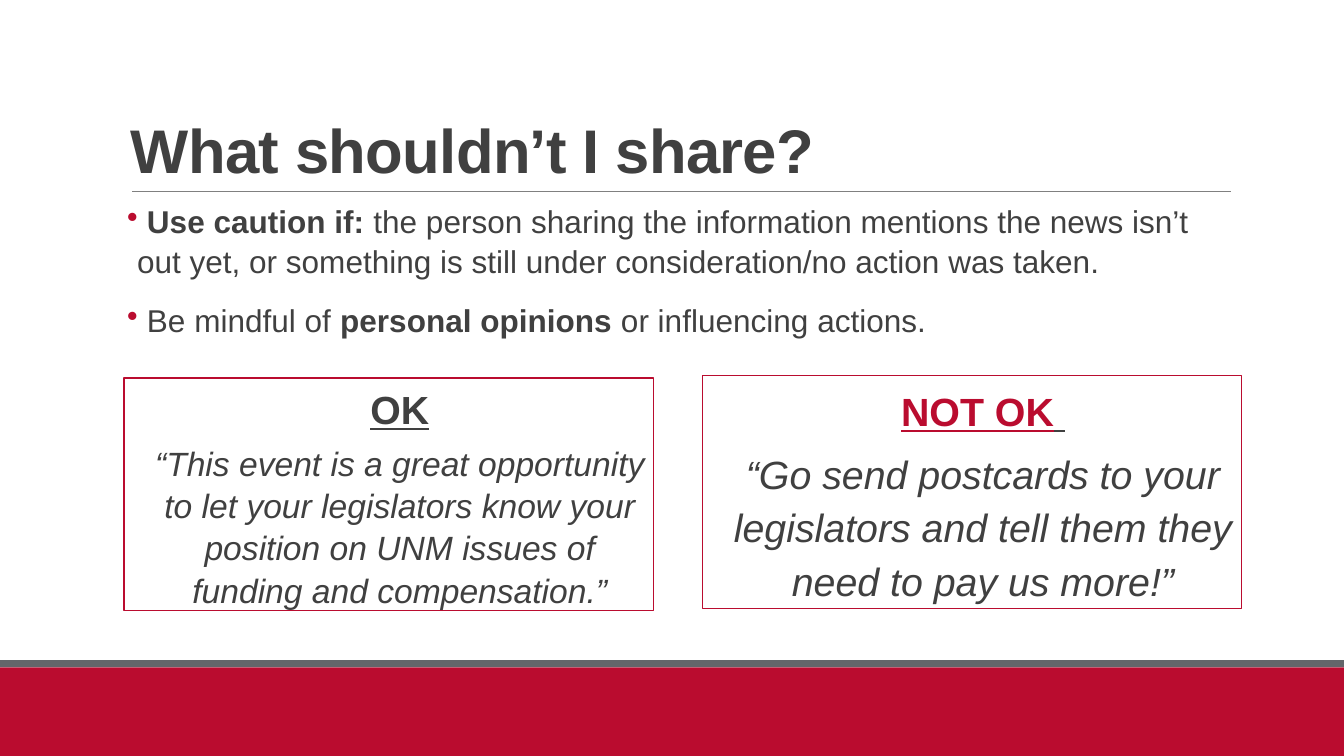
from dataclasses import dataclass, field

from pptx import Presentation
from pptx.dml.color import RGBColor
from pptx.enum.shapes import MSO_CONNECTOR, MSO_SHAPE
from pptx.enum.text import MSO_ANCHOR, PP_ALIGN
from pptx.oxml import parse_xml
from pptx.oxml.ns import nsdecls
from pptx.util import Inches, Pt

RED = RGBColor(0xBA, 0x0C, 0x2F)
SLATE = RGBColor(0x63, 0x66, 0x6A)
GRAY = RGBColor(0x80, 0x80, 0x80)
DARK = RGBColor(0x40, 0x40, 0x40)
WIDTH, HEIGHT = 13.33, 7.5


@dataclass
class Run:
    text: str
    size: float
    bold: bool = False
    italic: bool = False
    line: bool = False
    color: RGBColor = DARK
    track: int = 0


@dataclass
class Card:
    left: float
    top: float
    width: float
    lead: float
    runs: list[list[Run]] = field(default_factory=list)


def add_bar(slide, top: float, high: float, color: RGBColor) -> None:
    bar = slide.shapes.add_shape(
        MSO_SHAPE.RECTANGLE, 0, Inches(top), Inches(WIDTH), Inches(high))
    bar.shadow.inherit = False
    bar.fill.solid()
    bar.fill.fore_color.rgb = color
    bar.line.fill.background()


def add_text(shape, paras: list[list[Run]], *, align=PP_ALIGN.LEFT,
             anchor=MSO_ANCHOR.TOP, side: float = 0, lead: float = 1,
             before: float = 0, after: float = 0, margin: float = 0,
             indent: float = 0, bullet: bool = False) -> None:
    frame = shape.text_frame
    frame.word_wrap = True
    frame.vertical_anchor = anchor
    frame.margin_left = frame.margin_right = Inches(side)
    frame.margin_top = frame.margin_bottom = Inches(0.05)
    for num, runs in enumerate(paras):
        para = frame.add_paragraph() if num else frame.paragraphs[0]
        para.alignment = align
        para.line_spacing = lead
        para.space_before = Pt(before if num else 0)
        para.space_after = Pt(after)
        props = para._p.get_or_add_pPr()
        props.set("marL", str(Inches(margin)))
        props.set("indent", str(Inches(indent)))
        if bullet:
            props.append(parse_xml(
                f'<a:buClr {nsdecls("a")}><a:srgbClr val="{RED}"/></a:buClr>'))
            props.append(parse_xml(f'<a:buChar {nsdecls("a")} char="•"/>'))
        for item in runs:
            run = para.add_run()
            run.text = item.text
            font = run.font
            font.name = "Arial"
            font.size = Pt(item.size)
            font.bold = item.bold
            font.italic = item.italic
            font.underline = item.line
            font.color.rgb = item.color
            if item.track:
                run._r.get_or_add_rPr().set("spc", str(item.track))


def add_box(slide, left: float, top: float, width: float, high: float):
    return slide.shapes.add_textbox(
        Inches(left), Inches(top), Inches(width), Inches(high))


def add_card(slide, card: Card) -> None:
    box = slide.shapes.add_shape(
        MSO_SHAPE.RECTANGLE, Inches(card.left), Inches(card.top),
        Inches(card.width), Inches(2.31))
    box.shadow.inherit = False
    box.fill.background()
    box.line.color.rgb = RED
    box.line.width = Pt(0.75)
    add_text(box, card.runs, align=PP_ALIGN.CENTER, lead=card.lead,
             before=2, after=4, margin=0.22)


def add_rule(slide) -> None:
    rule = slide.shapes.add_connector(
        MSO_CONNECTOR.STRAIGHT, Inches(1.31), Inches(1.9),
        Inches(12.21), Inches(1.9))
    rule.line.color.rgb = GRAY
    rule.line.width = Pt(0.5)
    rule._element.spPr.append(parse_xml(f'<a:effectLst {nsdecls("a")}/>'))


TITLE = [[Run("What shouldn’t I share?", 44, bold=True, track=-50)]]
POINTS = [
    [Run(" ", 22.5), Run("Use caution if: ", 22.5, bold=True),
     Run("the person sharing the information mentions the news isn’t out yet, "
         "or something is still under consideration/no action was taken.",
         22.5)],
    [Run(" Be mindful of ", 22.5), Run("personal opinions ", 22.5, bold=True),
     Run("or influencing actions.", 22.5)],
]
CARDS = [
    Card(1.23, 3.75, 5.25, 1.05, [
        [Run("OK", 28, bold=True, line=True)],
        [Run("“This event is a great opportunity to let your legislators know "
             "your position on UNM issues of funding and compensation.”",
             24, italic=True)],
    ]),
    Card(6.97, 3.73, 5.34, 1.14, [
        [Run("NOT OK", 28.1, bold=True, line=True, color=RED),
         Run(" ", 28.1, line=True)],
        [Run("“Go send postcards to your legislators and tell them they need "
             "to pay us more!”", 28.1, italic=True)],
    ]),
]


def main() -> None:
    deck = Presentation()
    deck.slide_width, deck.slide_height = Inches(WIDTH), Inches(HEIGHT)
    slide = deck.slides.add_slide(deck.slide_layouts[6])

    # Footer bands and title rule
    add_bar(slide, 6.62, 0.88, RED)
    add_bar(slide, 6.55, 0.07, SLATE)
    add_rule(slide)

    # Title and bullet points
    add_text(add_box(slide, 1.2, 0.31, 11, 1.59), TITLE,
             anchor=MSO_ANCHOR.BOTTOM, side=0.1, lead=0.85)
    add_text(add_box(slide, 1.26, 1.94, 10.88, 1.59), POINTS, lead=1.05,
             before=12, after=2, margin=0.1, indent=-0.1, bullet=True)

    # Example cards
    for card in CARDS:
        add_card(slide, card)

    deck.save("out.pptx")


if __name__ == "__main__":
    main()
